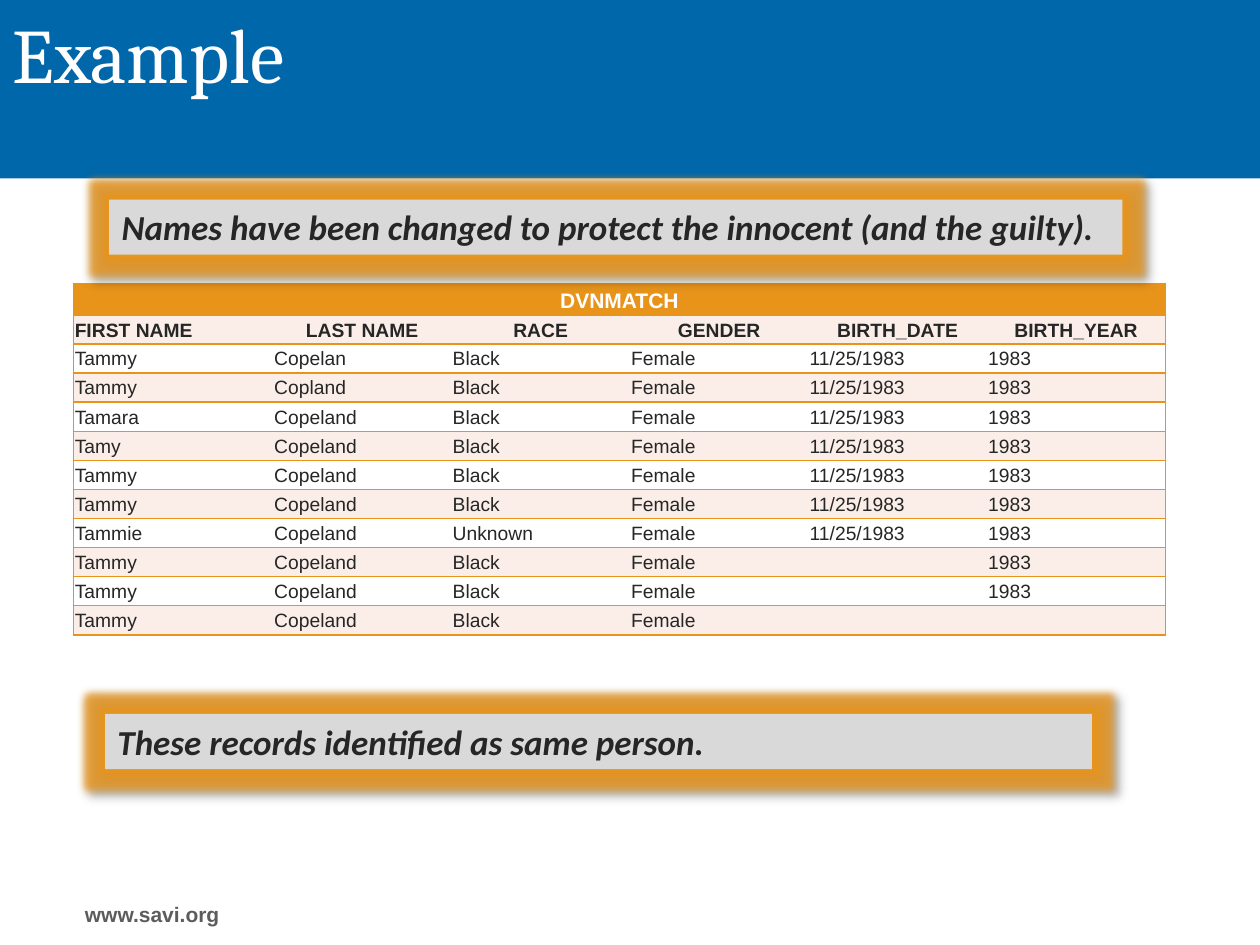
from lxml.etree import SubElement as Sub
from pptx import Presentation
from pptx.dml.color import RGBColor as Rgb
from pptx.enum.shapes import MSO_SHAPE as Shape
from pptx.enum.text import MSO_ANCHOR as Anchor, PP_ALIGN as Align
from pptx.oxml.ns import qn
from pptx.util import Inches, Pt

HUES = {"blue": "0067AB", "gold": "E8941A", "blush": "FBEEE8", "white": "FFFFFF",
        "grey": "D9D9D9", "ink": "262626", "slate": "5C5C5C", "black": "000000"}
UNIT = Inches(10) // 120  # the slide is a grid of 120 columns by 90 rows
WIDE, HIGH = 120, 90
PLAIN = "{2D5ABB26-0587-4C30-8999-92F81FD0307C}"  # table style without lines

TITLE = {"size": 44, "name": "Cambria", "hue": "white", "bold": False}
NOTE = {"size": 20, "name": "Calibri", "hue": "ink", "bold": True, "italic": True}
SITE = {"size": 12, "name": "Arial", "hue": "slate", "bold": True}
HEAD = {"size": 12, "name": "Arial", "hue": "white", "bold": True}
LABEL = {"size": 11, "name": "Arial", "hue": "ink", "bold": True}
BODY = {**LABEL, "bold": False}

LABELS = ["FIRST NAME", "LAST NAME", "RACE", "GENDER", "BIRTH_DATE", "BIRTH_YEAR"]
DAY, YEAR = "11/25/1983", "1983"
PEOPLE = [
    ("Tammy", "Copelan", "Black", DAY, YEAR),
    ("Tammy", "Copland", "Black", DAY, YEAR),
    ("Tamara", "Copeland", "Black", DAY, YEAR),
    ("Tamy", "Copeland", "Black", DAY, YEAR),
    ("Tammy", "Copeland", "Black", DAY, YEAR),
    ("Tammy", "Copeland", "Black", DAY, YEAR),
    ("Tammie", "Copeland", "Unknown", DAY, YEAR),
    ("Tammy", "Copeland", "Black", "", YEAR),
    ("Tammy", "Copeland", "Black", "", YEAR),
    ("Tammy", "Copeland", "Black", "", ""),
]


def grid(*spans):
    return [round(span * UNIT) for span in spans]


def paint(fill, hue):
    fill.solid()
    fill.fore_color.rgb = Rgb.from_string(HUES[hue])


def write(frame, text, look, align=Align.LEFT):
    """Put one styled line of text in a frame and return its paragraph."""
    para = frame.paragraphs[0]
    para.alignment = align
    if not text:
        para._p.get_or_add_endParaRPr().set("sz", str(look["size"] * 100))
        return para
    run = para.add_run()
    run.text = text
    for key, value in look.items():
        if key == "hue":
            run.font.color.rgb = Rgb.from_string(HUES[value])
        else:
            setattr(run.font, key, Pt(value) if key == "size" else value)
    return para


def tint(parent, hue, alpha):
    color = Sub(parent, qn("a:srgbClr"), val=HUES[hue])
    Sub(color, qn("a:alpha"), val=str(alpha * 1000))


def glow(shape):
    """Give a shape a gold glow and a soft shadow to the lower right."""
    effects = shape._element.spPr.find(qn("a:effectLst"))
    tint(Sub(effects, qn("a:glow"), rad=str(Pt(8))), "gold", 80)
    shade = Sub(effects, qn("a:outerShdw"), blurRad=str(Pt(4)),
                dist=str(Pt(3)), dir=str(45 * 60000), rotWithShape="0")
    tint(shade, "black", 40)


def block(slide, hue, *spans):
    shape = slide.shapes.add_shape(Shape.RECTANGLE, *grid(*spans))
    shape.shadow.inherit = False
    paint(shape.fill, hue)
    shape.line.fill.background()
    return shape


def note(slide, text, *spans):
    shape = block(slide, "grey", *spans)
    glow(shape)
    frame = shape.text_frame
    frame.word_wrap, frame.vertical_anchor = True, Anchor.TOP
    write(frame, text, NOTE)


def header(slide, text):
    band = block(slide, "blue", 0, 0, WIDE, 17)
    title = slide.shapes.title
    title._element.addprevious(band._element)
    title.left, title.top, title.width, title.height = grid(0, 0, 116, 17)
    title.text_frame.vertical_anchor = Anchor.TOP
    write(title.text_frame, text, TITLE)


def site(slide, text):
    box = slide.shapes.add_textbox(*grid(2, HIGH - 4.7, 25, 3.6))
    box.text_frame.word_wrap = True
    write(box.text_frame, text, SITE, Align.CENTER)


def edge(cell, sides):
    """Draw gold lines on the given sides, in the order L, R, T, B."""
    props = cell._tc.get_or_add_tcPr()
    for spot, side in enumerate(sides):
        line = props.makeelement(qn(f"a:ln{side}"), {"w": str(Pt(1))})
        color = Sub(line, qn("a:solidFill"))
        Sub(color, qn("a:srgbClr"), val=HUES["gold"])
        props.insert(spot, line)


def fill(cell, text, look, hue, align, anchor, sides):
    for side in ("left", "right", "top", "bottom"):
        setattr(cell, f"margin_{side}", Inches(0.01))
    cell.vertical_anchor = anchor
    paint(cell.fill, hue)
    edge(cell, sides)
    write(cell.text_frame, text, look, align).line_spacing = 1.15


def records(slide):
    rows = [LABELS] + [(*who[:3], "Female", *who[3:]) for who in PEOPLE]
    count, last = len(rows) + 1, len(LABELS) - 1
    frame = slide.shapes.add_table(count, last + 1, *grid(7, 27, 104, 2.4 * count))
    table = frame.table
    table.first_row = table.horz_banding = False
    frame._element.find(f".//{qn('a:tableStyleId')}").text = PLAIN
    for spot, col in enumerate(table.columns):
        col.width = 17 * UNIT if spot else 19 * UNIT
    for row in table.rows:
        row.height = Inches(0.2)
    table.cell(0, 0).merge(table.cell(0, last))
    fill(table.cell(0, 0), "DVNMATCH", HEAD, "gold", Align.CENTER, Anchor.MIDDLE, "LRTB")
    for down, row in enumerate(rows):
        top = down == 0
        hue = "white" if down % 2 else "blush"
        for over, text in enumerate(row):
            sides = {0: "LTB", last: "RTB"}.get(over, "TB")
            align = Align.CENTER if top and over else Align.LEFT
            fill(table.cell(down + 1, over), text, LABEL if top else BODY, hue,
                 align, Anchor.MIDDLE if top else Anchor.TOP, sides)


def main():
    deck = Presentation()
    deck.slide_width, deck.slide_height = grid(WIDE, HIGH)
    slide = deck.slides.add_slide(deck.slide_layouts[5])
    header(slide, "Example")
    site(slide, "www.savi.org")
    records(slide)
    note(slide, "These records identified as same person.", 10, 68, 94, 5.25)
    note(slide, "Names have been changed to protect the innocent (and the guilty).",
         10.4, 19, 96.5, 5.25)
    deck.save("out.pptx")


if __name__ == "__main__":
    main()
